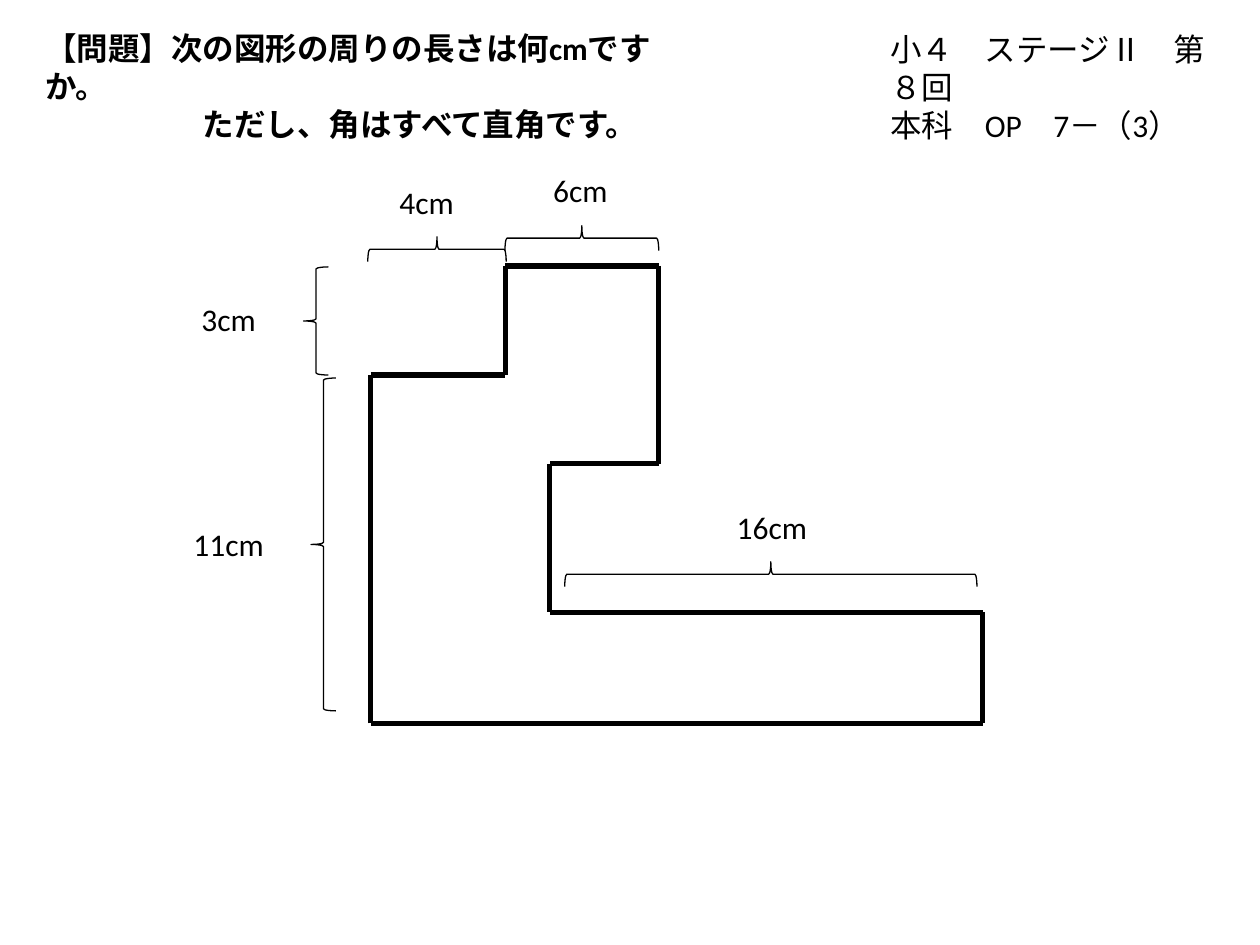
from itertools import pairwise
from lxml.etree import SubElement
from pptx import Presentation
from pptx.dml.color import RGBColor
from pptx.enum.shapes import MSO_CONNECTOR, MSO_SHAPE
from pptx.enum.text import MSO_AUTO_SIZE, PP_ALIGN
from pptx.oxml.ns import qn
from pptx.util import Cm, Pt

COLORS = {"ink": "000000"}
INK = RGBColor.from_string(COLORS["ink"])

prs = Presentation()
prs.slide_width, prs.slide_height = Cm(25.4), Cm(19.05)
s = prs.slides.add_slide(prs.slide_layouts[6])


def add_text(x, y, w, h, lines, align=PP_ALIGN.LEFT, bold=False):
    tf = s.shapes.add_textbox(Cm(x), Cm(y), Cm(w), Cm(h)).text_frame
    tf.word_wrap = True
    tf.auto_size = MSO_AUTO_SIZE.SHAPE_TO_FIT_TEXT
    tf.text = "\n".join(lines)
    for p in tf.paragraphs:
        p.alignment = align
        p.font.name, p.font.size, p.font.bold = "Calibri", Pt(18), bold
        p.font.color.rgb = INK
    return tf


# Outline of the figure, corner by corner
left, step, inner, tower, right = 7.47, 10.19, 11.08, 13.28, 19.81
top, shoulder, notch, ledge, bottom = 5.36, 7.56, 9.35, 12.34, 14.58
corners = [(left, shoulder), (step, shoulder), (step, top), (tower, top),
           (tower, notch), (inner, notch), (inner, ledge), (right, ledge),
           (right, bottom), (inner, bottom), (left, bottom), (left, shoulder)]
for (x1, y1), (x2, y2) in pairwise(corners):
    edge = s.shapes.add_connector(MSO_CONNECTOR.STRAIGHT, Cm(x1), Cm(y1), Cm(x2), Cm(y2))
    edge.line.color.rgb, edge.line.width = INK, Pt(3)
    SubElement(edge._element.spPr, qn("a:effectLst"))

# Lengths: label and its position, then brace position, span and rotation
measures = [
    ("6cm", 10.19, 3.33, 11.48, 3.25, 3.1, 270),
    ("3cm", 3.1, 5.92, 6.12, 5.38, 2.18, 180),
    ("11cm", 3.1, 10.46, 6.27, 7.62, 6.71, 180),
    ("4cm", 7.09, 3.56, 8.56, 3.63, 2.79, 270),
    ("16cm", 14.05, 10.11, 15.29, 7.42, 8.31, 270),
]
for label, tx, ty, bx, by, span, angle in measures:
    brace = s.shapes.add_shape(MSO_SHAPE.RIGHT_BRACE, Cm(bx), Cm(by), Cm(0.5), Cm(span))
    brace.rotation = angle
    brace.shadow.inherit = False
    brace.fill.background()
    brace.line.color.rgb, brace.line.width = INK, Pt(0.75)
    add_text(tx, ty, 3.02, 1.02, [label], PP_ALIGN.CENTER)

# Lesson reference and question
add_text(17.7, 0.48, 7.14, 1.8, ["小４　ステージⅡ　第８回", "本科　OP　7－（3）"])
tf = add_text(0.66, 0.46, 12.85, 1.8,
              ["【問題】次の図形の周りの長さは何cmですか。", "ただし、角はすべて直角です。"], bold=True)
pPr = tf.paragraphs[1]._p.get_or_add_pPr()
pPr.set("marL", str(Cm(3.18)))
pPr.set("indent", "0")

prs.save("out.pptx")
